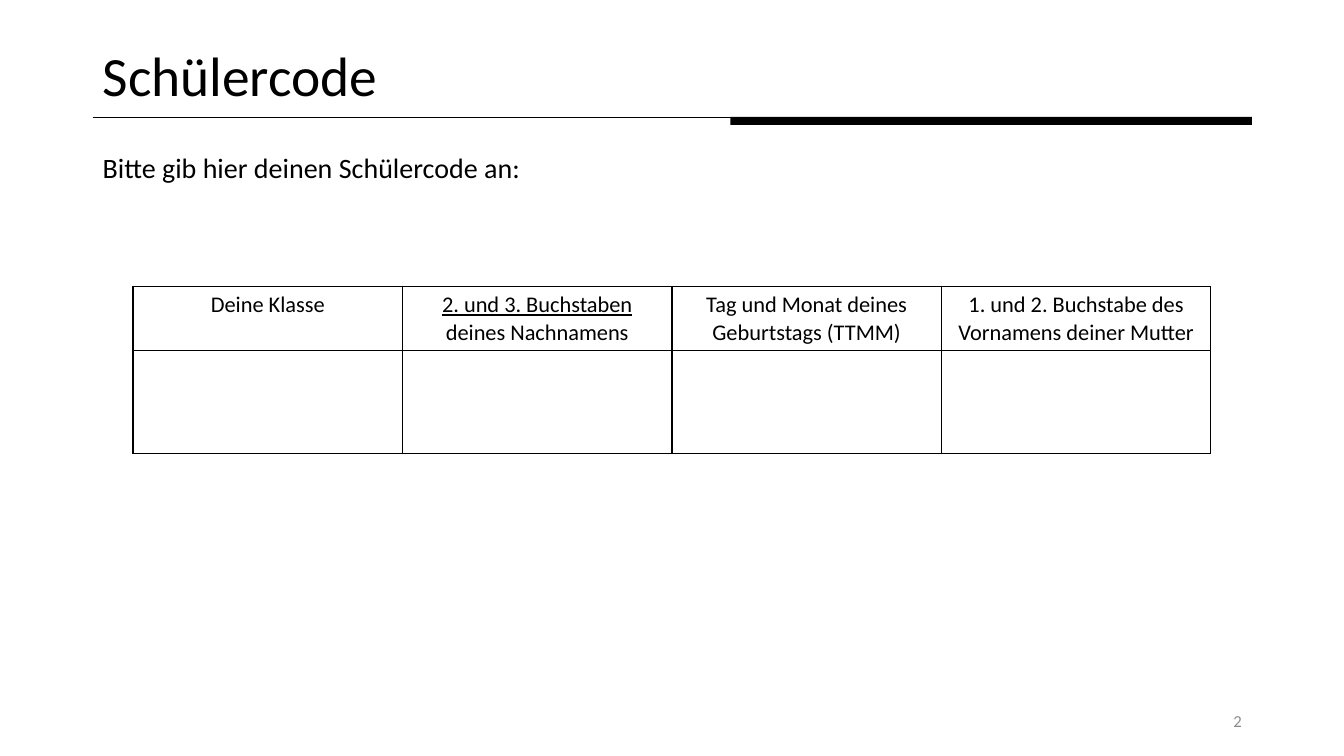
"""Build the slide that asks pupils for their personal code."""
from lxml import etree
from pptx import Presentation
from pptx import util as u
from pptx.dml.color import RGBColor
from pptx.enum import shapes, text
from pptx.oxml.ns import qn

WIDTH, HEIGHT = u.Inches(13.33), u.Inches(7.5)
COLOURS = {"ink": "000000", "number": "8C8C8C"}
FONT = "Calibri"
LEFT, CONTENT_WIDTH, RULE_TOP = 6.9, 86.25, 15.47
HEADINGS = [
    [("Deine Klasse", False)],
    [("2. und 3. Buchstaben ", True), ("deines Nachnamens", False)],
    [("Tag und Monat deines Geburtstags (TTMM)", False)],
    [("1. und 2. Buchstabe des Vornamens deiner Mutter", False)],
]


def across(percent):
    """Return a share of the slide's width."""
    return u.Emu(round(WIDTH * percent / 100))


def down(percent):
    """Return a share of the slide's height."""
    return u.Emu(round(HEIGHT * percent / 100))


def area(left, top, width, height):
    """Return a position and size given as percentages of the slide."""
    return across(left), down(top), across(width), down(height)


def colour(name):
    """Return a named colour."""
    return RGBColor.from_string(COLOURS[name])


def style_font(font, size, ink="ink"):
    """Set the typeface, size and colour of a font."""
    font.name, font.size = FONT, u.Pt(size)
    font.color.rgb = colour(ink)


def add_text(slide, box, words, size, ink="ink", anchor=text.MSO_ANCHOR.MIDDLE,
             align=text.PP_ALIGN.LEFT, spacing=0.9):
    """Add a text box with a single paragraph."""
    frame = slide.shapes.add_textbox(*area(*box)).text_frame
    frame.word_wrap = True
    frame.vertical_anchor = anchor
    paragraph = frame.paragraphs[0]
    paragraph.text = words
    paragraph.alignment = align
    paragraph.line_spacing = spacing
    style_font(paragraph.runs[0].font, size, ink)


def add_title_rule(slide):
    """Add the thin line under the title and its heavy right end."""
    line = slide.shapes.add_connector(
        shapes.MSO_CONNECTOR.STRAIGHT, across(LEFT), down(RULE_TOP),
        across(LEFT + CONTENT_WIDTH), down(RULE_TOP))
    line.line.color.rgb = colour("ink")
    line.line.width = u.Pt(0.5)
    etree.SubElement(line._element.spPr, qn("a:effectLst"))
    bar = slide.shapes.add_shape(
        shapes.MSO_SHAPE.RECTANGLE, *area(54.35, RULE_TOP, 38.8, 1.07))
    bar.shadow.inherit = False
    bar.fill.solid()
    bar.fill.fore_color.rgb = colour("ink")
    bar.line.fill.background()


def outline_cell(cell):
    """Give a cell four thin borders and no fill."""
    properties = cell._tc.get_or_add_tcPr()
    for side in ("lnL", "lnR", "lnT", "lnB"):
        border = etree.SubElement(properties, qn(f"a:{side}"), w=str(u.Pt(1)))
        fill = etree.SubElement(border, qn("a:solidFill"))
        etree.SubElement(fill, qn("a:srgbClr"), val=COLOURS["ink"])
    cell.fill.background()


def add_code_table(slide, left, top, width, row_heights):
    """Add the table with one empty field below each heading."""
    table = slide.shapes.add_table(
        len(row_heights), len(HEADINGS),
        *area(left, top, width, sum(row_heights))).table
    table.first_row = table.horz_banding = False
    for row, height in zip(table.rows, row_heights):
        row.height = down(height)
    for cell in table.iter_cells():
        outline_cell(cell)
    for column, parts in enumerate(HEADINGS):
        paragraph = table.cell(0, column).text_frame.paragraphs[0]
        paragraph.alignment = text.PP_ALIGN.CENTER
        for words, underlined in parts:
            run = paragraph.add_run()
            run.text = words
            style_font(run.font, 16)
            run.font.underline = underlined


def main():
    """Build and save the presentation."""
    presentation = Presentation()
    presentation.slide_width, presentation.slide_height = WIDTH, HEIGHT
    slide = presentation.slides.add_slide(presentation.slide_layouts[6])
    add_title_rule(slide)
    add_text(slide, (LEFT, 5.33, CONTENT_WIDTH, 10.13), "Schülercode", 39.6)
    add_text(slide, (LEFT, 19.73, CONTENT_WIDTH, 70.27),
             "Bitte gib hier deinen Schülercode an:", 20,
             anchor=text.MSO_ANCHOR.TOP)
    add_code_table(slide, 9.9, 37.87, 80.2, (8.5, 13.65))
    add_text(slide, (70.65, 92.67, 22.5, 5.33), "2", 12, ink="number",
             align=text.PP_ALIGN.RIGHT, spacing=1.0)
    presentation.save("out.pptx")


if __name__ == "__main__":
    main()
